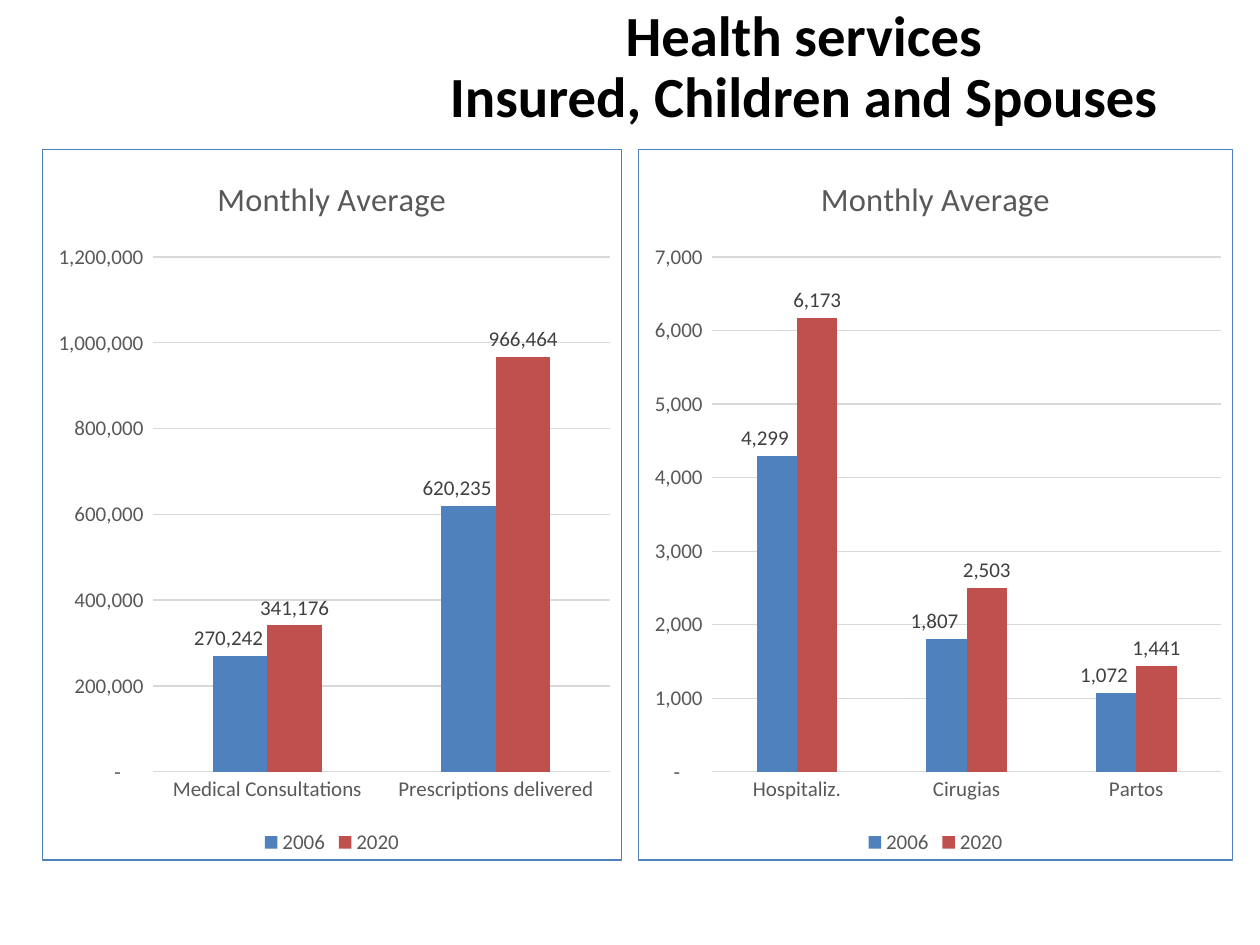
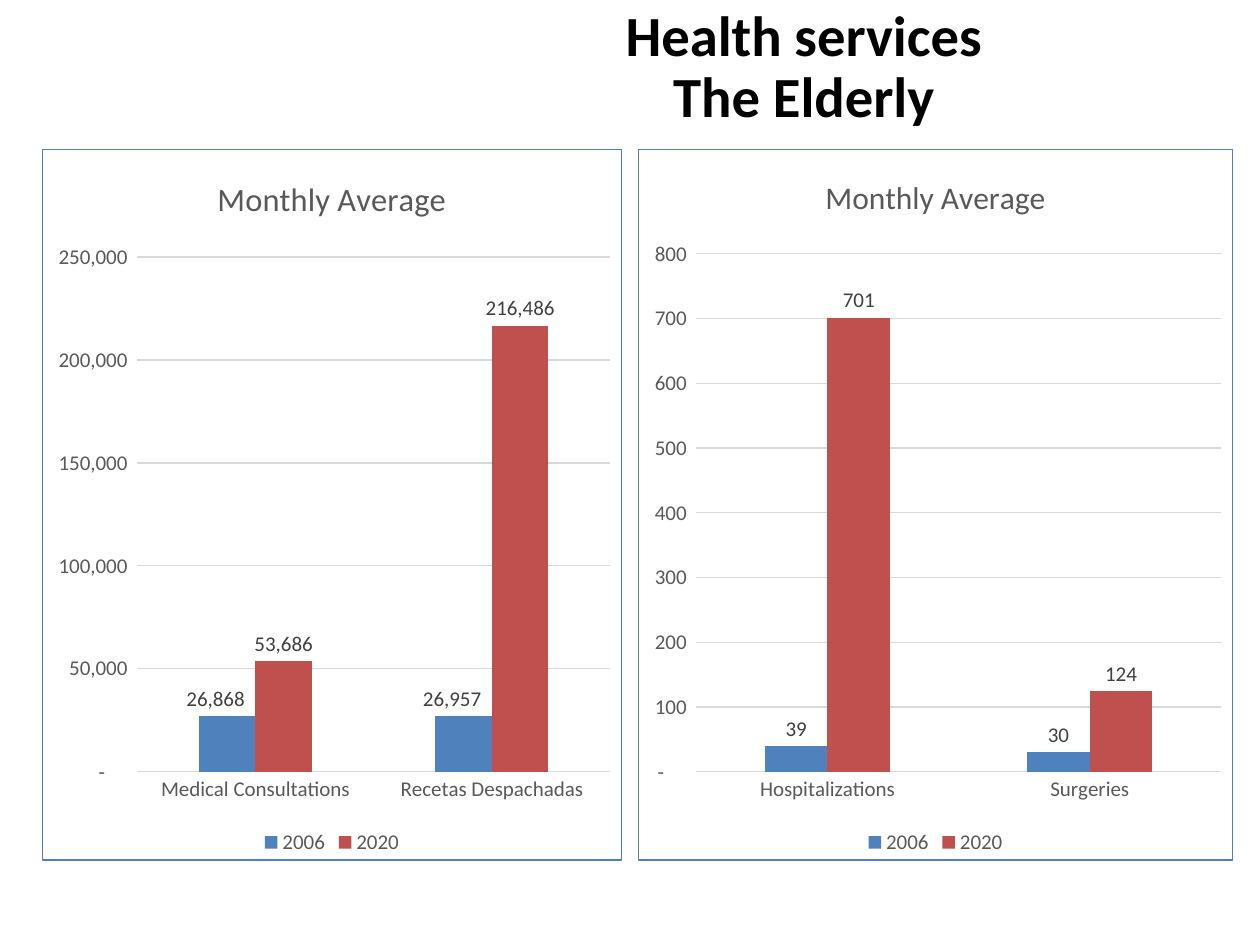
from dataclasses import dataclass

from lxml import etree
from pptx import Presentation
from pptx.chart.data import CategoryChartData
from pptx.dml.color import RGBColor
from pptx.enum.chart import XL_CHART_TYPE, XL_LABEL_POSITION, XL_LEGEND_POSITION, XL_TICK_MARK
from pptx.enum.text import MSO_ANCHOR, PP_ALIGN
from pptx.oxml import parse_xml
from pptx.oxml.ns import nsdecls, qn
from pptx.util import Pt

COLUMNS = XL_CHART_TYPE.COLUMN_CLUSTERED
ABOVE_BAR = XL_LABEL_POSITION.OUTSIDE_END
BOTTOM = XL_LEGEND_POSITION.BOTTOM
NO_TICKS = XL_TICK_MARK.NONE
CENTER = PP_ALIGN.CENTER
MIDDLE = MSO_ANCHOR.MIDDLE

PX = 9144  # EMU; 100 px to the inch
TITLE_ONLY = 5
YEARS = ("2006", "2020")
NUMBER_FORMAT = '_(* #,##0_);_(* \\(#,##0\\);_(* "-"??_);_('


@dataclass(frozen=True)
class Theme:
    font: str = "Calibri"
    title: str = "000000"
    axis_text: str = "595959"
    label_text: str = "404040"
    grid: str = "D9D9D9"
    border: str = "4F81BD"
    series: tuple = ("4F81BD", "C0504D")
    title_size: float = 32.4
    chart_title_size: float = 18.6
    text_size: float = 12
    line_width: float = 0.75


THEME = Theme()

# Places shared by the slides: left, top, width, height in px
TITLE_BOX = (276, 0, 724, 109)
CHART_BOXES = ((33, 118, 461, 565), (506, 118, 473, 565))


@dataclass(frozen=True)
class MonthlyChart:
    categories: tuple
    values: tuple  # one tuple per year
    label_shift: float = 0  # 2006 labels, as a share of the chart width
    title_size: float = THEME.chart_title_size


SLIDES = (
    ("Health services\vInsured, Children and Spouses", (
        MonthlyChart(("Medical Consultations", "Prescriptions delivered"),
                     ((270242, 620235), (341176, 966464)), -0.02),
        MonthlyChart(("Hospitaliz.", "Cirugias", "Partos"),
                     ((4299, 1807, 1072), (6173, 2503, 1441)), -0.02),
    )),
    ("Health services\vThe Elderly", (
        MonthlyChart(("Medical Consultations", "Recetas Despachadas"),
                     ((26868, 26957), (53686, 216486)), -0.02),
        MonthlyChart(("Hospitalizations", "Surgeries"),
                     ((39, 30), (701, 124)), title_size=18),
    )),
)


def to_emu(box):
    return [length * PX for length in box]


def style_font(font, size, color, bold=False):
    font.name = THEME.font
    font.size = Pt(size)
    font.bold = bold
    font.color.rgb = RGBColor.from_string(color)


def style_line(line):
    line.color.rgb = RGBColor.from_string(THEME.grid)
    line.width = Pt(THEME.line_width)


def set_title(page, text):
    title = page.shapes.title
    title.left, title.top, title.width, title.height = to_emu(TITLE_BOX)
    frame = title.text_frame
    frame.text = text
    frame.vertical_anchor = MIDDLE
    para = frame.paragraphs[0]
    para.alignment = CENTER
    para.line_spacing = 0.9
    style_font(para.font, THEME.title_size, THEME.title, bold=True)


def add_border(chart):
    frame = parse_xml(
        f'<c:spPr {nsdecls("c", "a")}><a:noFill/>'
        f'<a:ln w="{Pt(THEME.line_width)}"><a:solidFill>'
        f'<a:srgbClr val="{THEME.border}"/></a:solidFill></a:ln></c:spPr>')
    chart.element.find(qn("c:chart")).addnext(frame)


def style_axes(chart):
    for axis in (chart.category_axis, chart.value_axis):
        axis.major_tick_mark = axis.minor_tick_mark = NO_TICKS
        style_font(axis.tick_labels.font, THEME.text_size, THEME.axis_text)
    style_line(chart.category_axis.format.line)
    value_axis = chart.value_axis
    value_axis.format.line.fill.background()
    style_line(value_axis.major_gridlines.format.line)
    value_axis.tick_labels.number_format = NUMBER_FORMAT
    value_axis.tick_labels.number_format_is_linked = False


def style_series(series, color):
    series.smooth = False if hasattr(series, "smooth") else None
    series.format.fill.solid()
    series.format.fill.fore_color.rgb = RGBColor.from_string(color)
    labels = series.data_labels
    labels.show_value = True
    labels.position = ABOVE_BAR
    labels.number_format = NUMBER_FORMAT
    labels.number_format_is_linked = False
    style_font(labels.font, THEME.text_size, THEME.label_text)


def shift_labels(series, count, shift):
    for index in range(count):
        label = series.points[index].data_label
        style_font(label.font, THEME.text_size, THEME.label_text)
        label.position = ABOVE_BAR
    for element in series.data_labels._element.findall(qn("c:dLbl")):
        layout = etree.Element(qn("c:layout"))
        manual = etree.SubElement(layout, qn("c:manualLayout"))
        etree.SubElement(manual, qn("c:x"), val=str(shift))
        etree.SubElement(manual, qn("c:y"), val="0")
        element.find(qn("c:idx")).addnext(layout)


def add_monthly_chart(page, box, content):
    data = CategoryChartData(number_format=NUMBER_FORMAT)
    data.categories = content.categories
    for year, values in zip(YEARS, content.values):
        data.add_series(year, values)
    chart = page.shapes.add_chart(COLUMNS, *to_emu(box), data).chart
    style_font(chart.font, THEME.text_size, THEME.axis_text)
    add_border(chart)

    # Title and legend
    para = chart.chart_title.text_frame.paragraphs[0]
    para.text = "Monthly Average"
    style_font(para.font, content.title_size, THEME.axis_text)
    chart.chart_title.include_in_layout = False
    chart.has_legend = True
    chart.legend.position = BOTTOM
    chart.legend.include_in_layout = False
    style_font(chart.legend.font, THEME.text_size, THEME.axis_text)

    # Axes and columns
    style_axes(chart)
    plot = chart.plots[0]
    plot.vary_by_categories = False
    plot.gap_width = 219
    plot.overlap = 0
    for series, color in zip(plot.series, THEME.series):
        style_series(series, color)
    if content.label_shift:
        shift_labels(plot.series[0], len(content.categories), content.label_shift)


def main():
    deck = Presentation()
    deck.slide_width, deck.slide_height = to_emu((1000, 750))
    for title, charts in SLIDES:
        page = deck.slides.add_slide(deck.slide_layouts[TITLE_ONLY])
        set_title(page, title)
        for box, content in zip(CHART_BOXES, charts):
            add_monthly_chart(page, box, content)
    deck.save("out.pptx")


if __name__ == "__main__":
    main()
